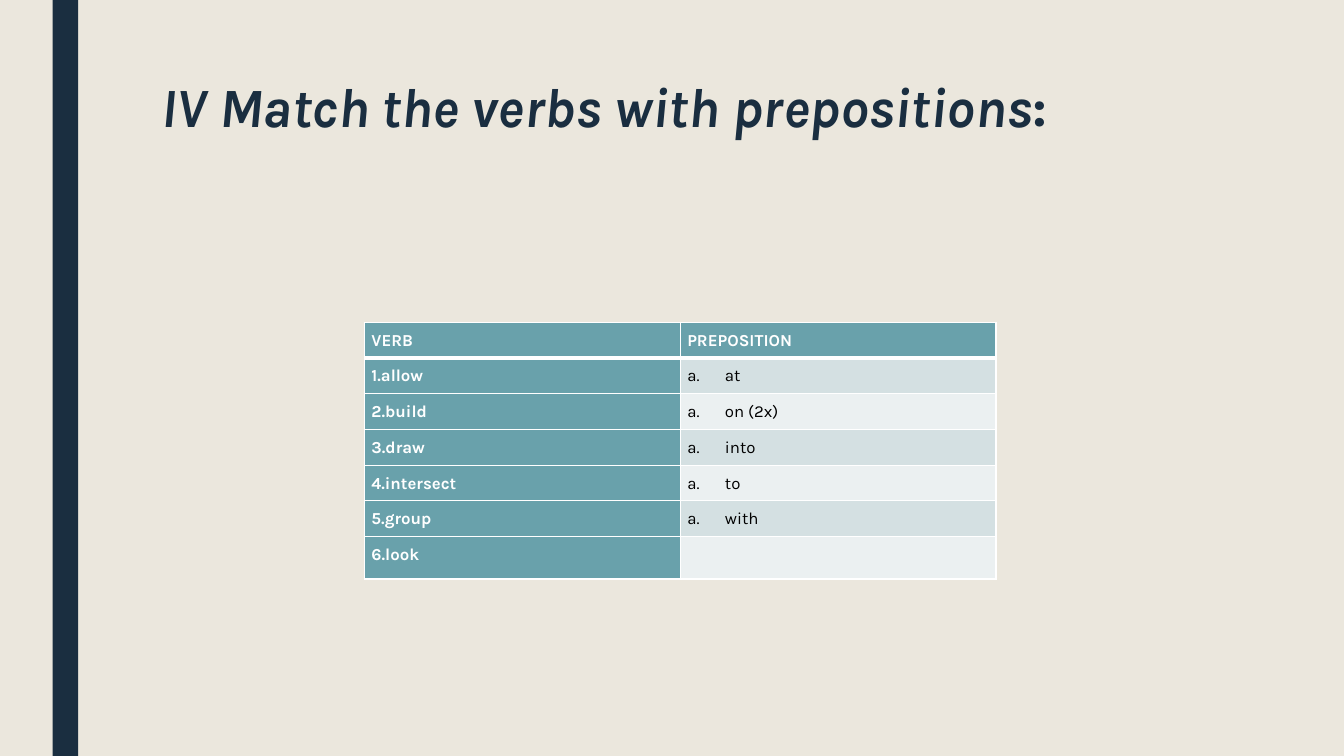
from lxml.etree import SubElement
from pptx import Presentation
from pptx.dml.color import RGBColor
from pptx.enum.shapes import MSO_SHAPE as Shape
from pptx.enum.text import MSO_ANCHOR as Anchor, MSO_AUTO_SIZE as AutoSize, PP_ALIGN as Align
from pptx.oxml.ns import qn
from pptx.util import Cm, Pt

FONT = "Karla"
SAND = RGBColor(0xEB, 0xE7, 0xDD)
NAVY = RGBColor(0x1A, 0x2E, 0x40)
TEAL = RGBColor(0x69, 0xA1, 0xAB)
BAND_DARK = RGBColor(0xD4, 0xE0, 0xE2)
BAND_LIGHT = RGBColor(0xEB, 0xF0, 0xF1)
WHITE = RGBColor(0xFF, 0xFF, 0xFF)
BLACK = RGBColor(0, 0, 0)

ROWS = [
    ("VERB", "PREPOSITION"),
    ("1.allow", "at"),
    ("2.build", "on (2x)"),
    ("3.draw", "into"),
    ("4.intersect", "to"),
    ("5.group", "with"),
    ("6.look", ""),
]


def add_text(paragraph, text, size=12, color=BLACK, bold=False, italic=False):
    run = paragraph.add_run()
    run.text = text
    font = run.font
    font.name, font.size = FONT, Pt(size)
    font.bold, font.italic = bold, italic
    font.color.rgb = color


def add_letter(paragraph):
    """Number the paragraph "a." with a hanging indent."""
    properties = paragraph._p.get_or_add_pPr()
    properties.set("marL", str(Cm(0.95)))
    properties.set("indent", str(-Cm(0.95)))
    SubElement(properties, qn("a:buFont"), typeface=FONT)
    SubElement(properties, qn("a:buAutoNum"), type="alphaLcPeriod")


def add_border(cell, side, width):
    line = SubElement(cell._tc.get_or_add_tcPr(), qn(f"a:ln{side}"), w=str(Pt(width)))
    fill = SubElement(line, qn("a:solidFill"))
    SubElement(fill, qn("a:srgbClr"), val=str(WHITE))


class SlideBuilder:
    def __init__(self, presentation):
        self.slide = presentation.slides.add_slide(presentation.slide_layouts[5])
        background = self.slide.background.fill
        background.solid()
        background.fore_color.rgb = SAND

    def bar(self, left, top, width, height):
        shape = self.slide.shapes.add_shape(
            Shape.RECTANGLE, Cm(left), Cm(top), Cm(width), Cm(height))
        shape.shadow.inherit = False
        shape.fill.solid()
        shape.fill.fore_color.rgb = NAVY
        shape.line.fill.background()

    def title(self, text, ending, left, top, width, height):
        title = self.slide.shapes.title
        title.left, title.top = Cm(left), Cm(top)
        title.width, title.height = Cm(width), Cm(height)
        frame = title.text_frame
        frame.word_wrap = True
        frame.auto_size = AutoSize.NONE
        frame.vertical_anchor = Anchor.TOP
        paragraph = frame.paragraphs[0]
        paragraph.alignment = Align.LEFT
        paragraph.line_spacing = 0.89
        add_text(paragraph, text, size=39.6, color=NAVY, bold=True, italic=True)
        add_text(paragraph, ending, size=39.6, color=NAVY, bold=True)

    def table(self, rows, left, top, column_width, row_height):
        columns = len(rows[0])
        table = self.slide.shapes.add_table(
            len(rows), columns, Cm(left), Cm(top),
            Cm(column_width * columns), Cm(row_height * len(rows))).table
        table.first_col = True
        for column in table.columns:
            column.width = Cm(column_width)
        for row, texts in enumerate(rows):
            table.rows[row].height = Cm(row_height)
            for column, text in enumerate(texts):
                self.cell(table.cell(row, column), text, row, column)

    def cell(self, cell, text, row, column):
        heading = row == 0 or column == 0
        # Borders, with a heavy rule under the header
        widths = {"L": 1, "R": 1, "T": 3 if row == 1 else 1, "B": 3 if row == 0 else 1}
        for side, width in widths.items():
            add_border(cell, side, width)
        cell.fill.solid()
        cell.fill.fore_color.rgb = (
            TEAL if heading else BAND_DARK if row % 2 else BAND_LIGHT)
        cell.margin_left = cell.margin_right = Cm(0.18)
        cell.margin_top = cell.margin_bottom = Cm(0.18)
        # Text
        paragraph = cell.text_frame.paragraphs[0]
        paragraph.alignment = Align.JUSTIFY
        paragraph.line_spacing = 1.07
        if text and not heading:
            add_letter(paragraph)
        add_text(paragraph, text, color=WHITE if heading else BLACK, bold=heading)


def main():
    presentation = Presentation()
    presentation.slide_width, presentation.slide_height = Cm(33.87), Cm(19.05)
    builder = SlideBuilder(presentation)
    builder.bar(1.33, 0, 0.64, 19.05)
    builder.title("IV Match the verbs with prepositions", ":", 3.81, 1.9, 26.67, 4.11)
    builder.table(ROWS, left=9.18, top=8.12, column_width=7.96, row_height=0.9)
    presentation.save("out.pptx")


if __name__ == "__main__":
    main()
